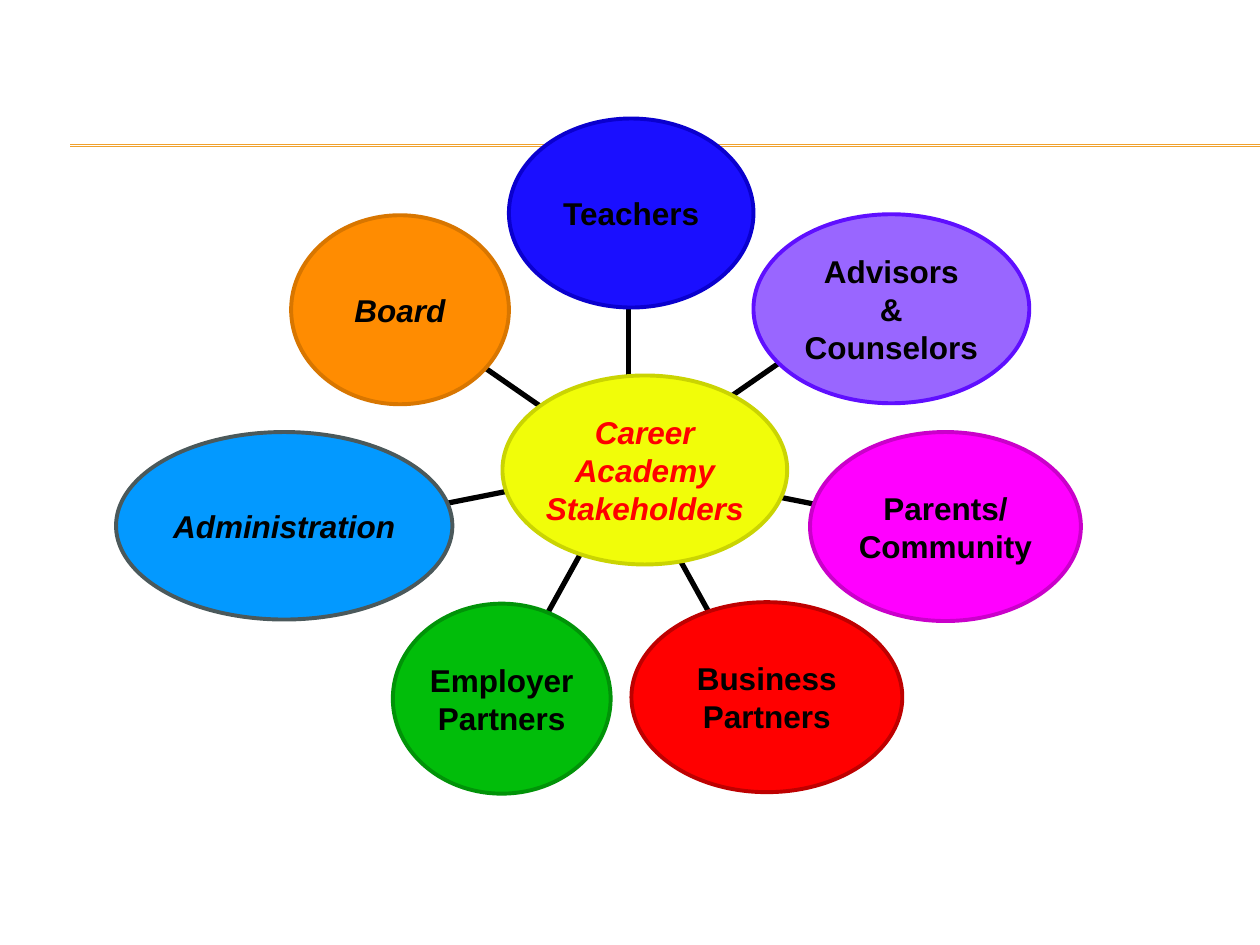
"""Build a hub-and-spoke slide of career academy stakeholders."""
import math

import pptx
import pptx.dml.color
import pptx.enum.shapes
import pptx.enum.text
import pptx.oxml.ns
import pptx.util
from lxml import etree

Cm = pptx.util.Cm
Pt = pptx.util.Pt
RGBColor = pptx.dml.color.RGBColor

BLACK = RGBColor(0x00, 0x00, 0x00)
RED = RGBColor(0xFF, 0x00, 0x00)
DARK_RED = RGBColor(0xBE, 0x00, 0x00)
GOLD = RGBColor(0xF0, 0xA2, 0x2E)
BLUE = RGBColor(0x1A, 0x0F, 0xFF)
DARK_BLUE = RGBColor(0x0A, 0x00, 0xCE)
PURPLE = RGBColor(0x99, 0x66, 0xFF)
DARK_PURPLE = RGBColor(0x5F, 0x0F, 0xFF)
MAGENTA = RGBColor(0xFF, 0x00, 0xFF)
DARK_MAGENTA = RGBColor(0xCA, 0x00, 0xCA)
GREEN = RGBColor(0x01, 0xBD, 0x0A)
DARK_GREEN = RGBColor(0x01, 0x93, 0x08)
SKY = RGBColor(0x03, 0x99, 0xFF)
SLATE = RGBColor(0x4B, 0x59, 0x5B)
ORANGE = RGBColor(0xFF, 0x8C, 0x01)
DARK_ORANGE = RGBColor(0xD8, 0x76, 0x00)
YELLOW = RGBColor(0xF1, 0xFD, 0x09)
DARK_YELLOW = RGBColor(0xCA, 0xD4, 0x02)

STAKEHOLDERS = [
    (["Teachers"], (10.26, 2.39, 4.93, 3.81), BLUE, DARK_BLUE, False),
    (["Advisors", "&", "Counselors"], (15.19, 4.32, 5.56, 3.81), PURPLE, DARK_PURPLE, False),
    (["Parents/", "Community"], (16.33, 8.71, 5.46, 3.81), MAGENTA, DARK_MAGENTA, False),
    (["Business Partners"], (12.73, 12.14, 5.46, 3.83), RED, DARK_RED, False),
    (["Employer Partners"], (7.92, 12.17, 4.39, 3.83), GREEN, DARK_GREEN, False),
    (["Administration"], (2.34, 8.71, 6.78, 3.78), SKY, SLATE, True),
    (["Board"], (5.87, 4.34, 4.39, 3.81), ORANGE, DARK_ORANGE, True),
]
HUB = (["Career", "Academy", "Stakeholders"], (10.13, 7.57, 5.74, 3.81), YELLOW, DARK_YELLOW, True)

HEADER_RULE_TOPS = [2.92, 2.95]
HEADER_RULE_LEFT, SLIDE_WIDTH, SLIDE_HEIGHT = 1.42, 25.4, 19.05
SPOKE_CENTER = (12.67, 9.42)
INNER_RADII = (1.88, 1.63)
OUTER_RADII = (4.1, 3.56)

FRAME_FORMAT = {
    "margin_left": 0, "margin_top": 0, "margin_right": 0, "margin_bottom": 0,
    "word_wrap": True, "vertical_anchor": pptx.enum.text.MSO_ANCHOR.MIDDLE,
}
FONT_FORMAT = {"name": "Arial", "size": Pt(18), "bold": True}


def set_format(target, values):
    for name, value in values.items():
        setattr(target, name, value)


def add_line(slide, start, end, color, width):
    line = slide.shapes.add_connector(
        pptx.enum.shapes.MSO_CONNECTOR.STRAIGHT, *map(Cm, start + end))
    line.line.color.rgb = color
    line.line.width = Pt(width)
    etree.SubElement(line._element.spPr, pptx.oxml.ns.qn("a:effectLst"))


def add_ellipse(slide, lines, box, fill, outline, italic, text_color=BLACK):
    shape = slide.shapes.add_shape(pptx.enum.shapes.MSO_SHAPE.OVAL, *map(Cm, box))
    shape.shadow.inherit = False
    shape.fill.solid()
    shape.fill.fore_color.rgb = fill
    shape.line.color.rgb = outline
    shape.line.width = Pt(2.25)
    frame = shape.text_frame
    set_format(frame, FRAME_FORMAT)
    frame.text = "\n".join(lines)
    for paragraph in frame.paragraphs:
        paragraph.alignment = pptx.enum.text.PP_ALIGN.CENTER
        for run in paragraph.runs:
            set_format(run.font, {**FONT_FORMAT, "italic": italic})
            run.font.color.rgb = text_color


def spoke_point(index, radii):
    angle = 2 * math.pi * index / len(STAKEHOLDERS)
    return (SPOKE_CENTER[0] + radii[0] * math.sin(angle),
            SPOKE_CENTER[1] - radii[1] * math.cos(angle))


def main():
    presentation = pptx.Presentation()
    set_format(presentation, {"slide_width": Cm(SLIDE_WIDTH), "slide_height": Cm(SLIDE_HEIGHT)})
    slide = presentation.slides.add_slide(presentation.slide_layouts[6])
    for top in HEADER_RULE_TOPS:
        add_line(slide, (HEADER_RULE_LEFT, top), (SLIDE_WIDTH, top), GOLD, 0.75)
    for index, stakeholder in enumerate(STAKEHOLDERS):
        add_line(slide, spoke_point(index, INNER_RADII), spoke_point(index, OUTER_RADII), BLACK, 3)
        add_ellipse(slide, *stakeholder)
    add_ellipse(slide, *HUB, text_color=RED)
    presentation.save("out.pptx")


if __name__ == "__main__":
    main()
